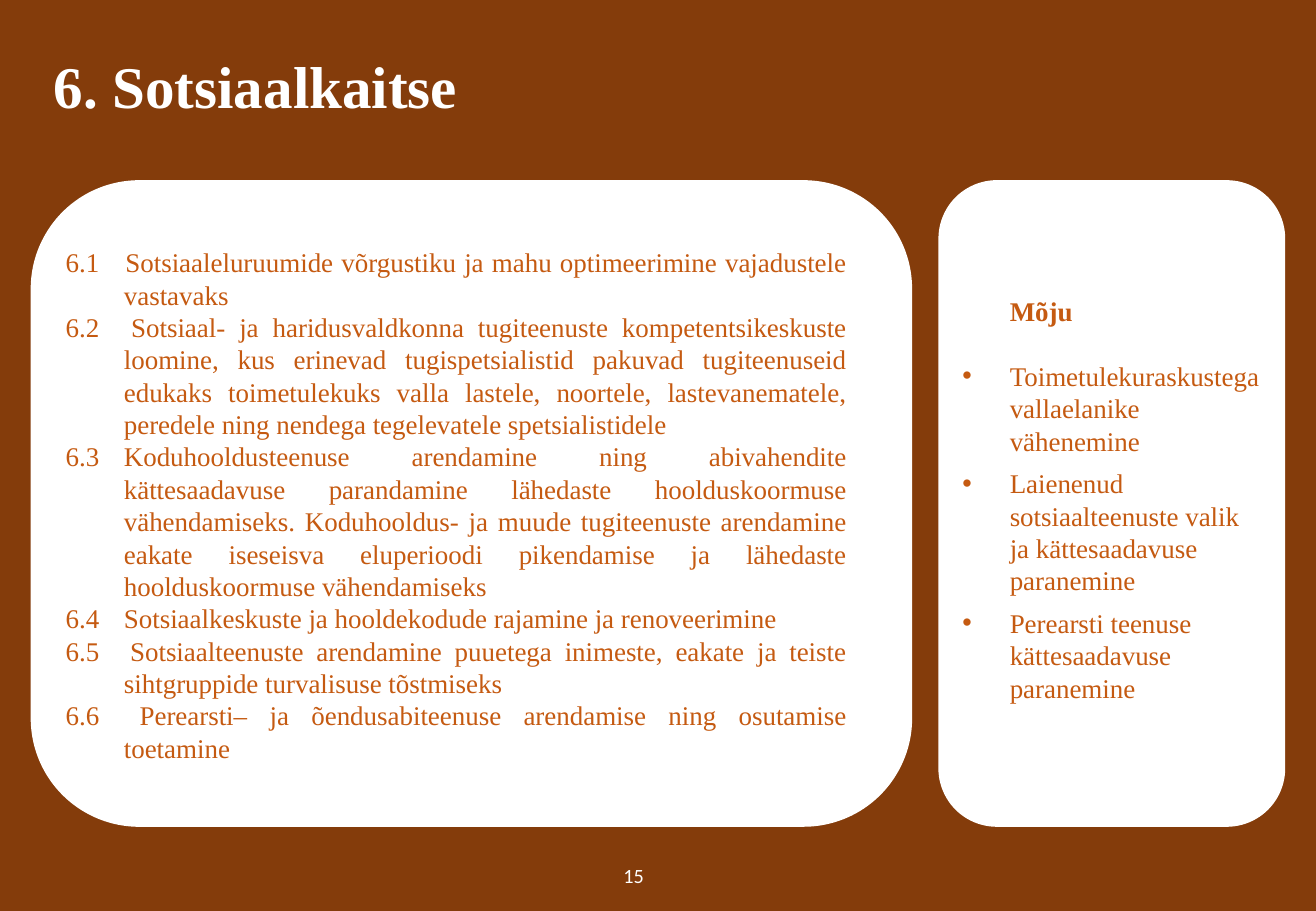
from dataclasses import dataclass

from pptx import Presentation
from pptx import util as u
from pptx.dml.color import RGBColor
from pptx.enum import shapes, text
from pptx.oxml.xmlchemy import OxmlElement

PX = 9144


@dataclass(frozen=True)
class Theme:
    back: str = "843C0B"
    panel: str = "FFFFFF"
    light: str = "FFFFFF"
    accent: str = "C55A11"
    serif: str = "Times New Roman"
    sans: str = "Calibri"
    title: int = 35
    body: int = 16
    small: int = 12
    pitch: float = 19.2


@dataclass(frozen=True)
class Box:
    left: int
    top: int
    width: int
    height: int

    def emu(self) -> tuple:
        return tuple(u.Emu(n * PX) for n in (self.left, self.top, self.width, self.height))


@dataclass(frozen=True)
class Line:
    words: str
    margin: int = 0
    indent: int = 0
    bullet: bool = False
    bold: bool = False
    after: float = 0


THEME = Theme()
PANELS = [Box(26, 149, 724, 531), Box(773, 149, 284, 531)]

GOALS = [
    "6.1 \tSotsiaaleluruumide võrgustiku ja mahu optimeerimine vajadustele vastavaks",
    "6.2 \tSotsiaal- ja haridusvaldkonna tugiteenuste kompetentsikeskuste loomine, "
    "kus erinevad tugispetsialistid pakuvad tugiteenuseid edukaks toimetulekuks valla "
    "lastele, noortele, lastevanematele, peredele ning nendega tegelevatele spetsialistidele",
    "6.3\tKoduhooldusteenuse arendamine ning abivahendite kättesaadavuse parandamine "
    "lähedaste hoolduskoormuse vähendamiseks. Koduhooldus- ja muude tugiteenuste arendamine "
    "eakate iseseisva eluperioodi pikendamise ja lähedaste hoolduskoormuse vähendamiseks",
    "6.4 \tSotsiaalkeskuste ja hooldekodude rajamine ja renoveerimine",
    "6.5 \tSotsiaalteenuste arendamine puuetega inimeste, eakate ja teiste sihtgruppide "
    "turvalisuse tõstmiseks",
    "6.6 \tPerearsti– ja õendusabiteenuse arendamise ning osutamise toetamine",
]

EFFECTS = [
    "Toimetulekuraskustega vallaelanike vähenemine",
    "Laienenud sotsiaalteenuste valik ja kättesaadavuse paranemine",
    "Perearsti teenuse kättesaadavuse paranemine",
]


def add_panel(slide, box: Box) -> None:
    panel = slide.shapes.add_shape(shapes.MSO_SHAPE.ROUNDED_RECTANGLE, *box.emu())
    panel.adjustments[0] = 0.167
    panel.shadow.inherit = False
    panel.fill.solid()
    panel.fill.fore_color.rgb = RGBColor.from_string(THEME.panel)
    panel.line.color.rgb = RGBColor.from_string(THEME.panel)
    panel.line.width = u.Pt(1)


def set_indent(para, line: Line) -> None:
    props = para._p.get_or_add_pPr()
    props.set("marL", str(line.margin * PX))
    props.set("indent", str(line.indent * PX))
    if line.bullet:
        font = OxmlElement("a:buFont")
        font.set("typeface", "Arial")
        mark = OxmlElement("a:buChar")
        mark.set("char", "•")
        props.extend([font, mark])


def add_text(slide, box: Box, lines: list[Line], *, size: int, color: str,
             font: str = THEME.serif, align=text.PP_ALIGN.LEFT,
             spacing=None, wrap: bool = True) -> None:
    frame = slide.shapes.add_textbox(*box.emu()).text_frame
    frame.word_wrap = wrap
    frame.vertical_anchor = text.MSO_ANCHOR.MIDDLE
    frame.margin_left = frame.margin_right = u.Emu(5 * PX)
    frame.margin_top = frame.margin_bottom = u.Emu(5 * PX)
    for index, line in enumerate(lines):
        para = frame.add_paragraph() if index else frame.paragraphs[0]
        para.alignment = align
        para.line_spacing = spacing
        para.space_after = u.Pt(line.after)
        set_indent(para, line)
        run = para.add_run()
        run.text = line.words
        run.font.name = font
        run.font.size = u.Pt(size)
        run.font.bold = line.bold
        run.font.color.rgb = RGBColor.from_string(color)


def main() -> None:
    deck = Presentation()
    deck.slide_width, deck.slide_height = u.Emu(1083 * PX), u.Emu(750 * PX)
    slide = deck.slides.add_slide(deck.slide_layouts[6])
    slide.background.fill.solid()
    slide.background.fill.fore_color.rgb = RGBColor.from_string(THEME.back)

    for panel in PANELS:
        add_panel(slide, panel)

    pitch = u.Pt(THEME.pitch)
    goals = [Line(words, 48, -48) for words in GOALS]
    add_text(slide, Box(49, 195, 653, 441), goals, size=THEME.body, color=THEME.accent,
             align=text.PP_ALIGN.JUSTIFY, spacing=pitch)

    effects = [Line("Mõju", 39, bold=True, after=THEME.pitch)]
    effects += [Line(words, 39, -39, bullet=True, after=6) for words in EFFECTS]
    add_text(slide, Box(787, 236, 257, 350), effects, size=THEME.body, color=THEME.accent,
             spacing=pitch)

    add_text(slide, Box(39, 44, 985, 60), [Line("6. Sotsiaalkaitse", bold=True)],
             size=THEME.title, color=THEME.light, spacing=0.9)
    add_text(slide, Box(507, 706, 29, 29), [Line("15")], size=THEME.small,
             color=THEME.light, font=THEME.sans, align=text.PP_ALIGN.CENTER, wrap=False)
    deck.save("out.pptx")


if __name__ == "__main__":
    main()
